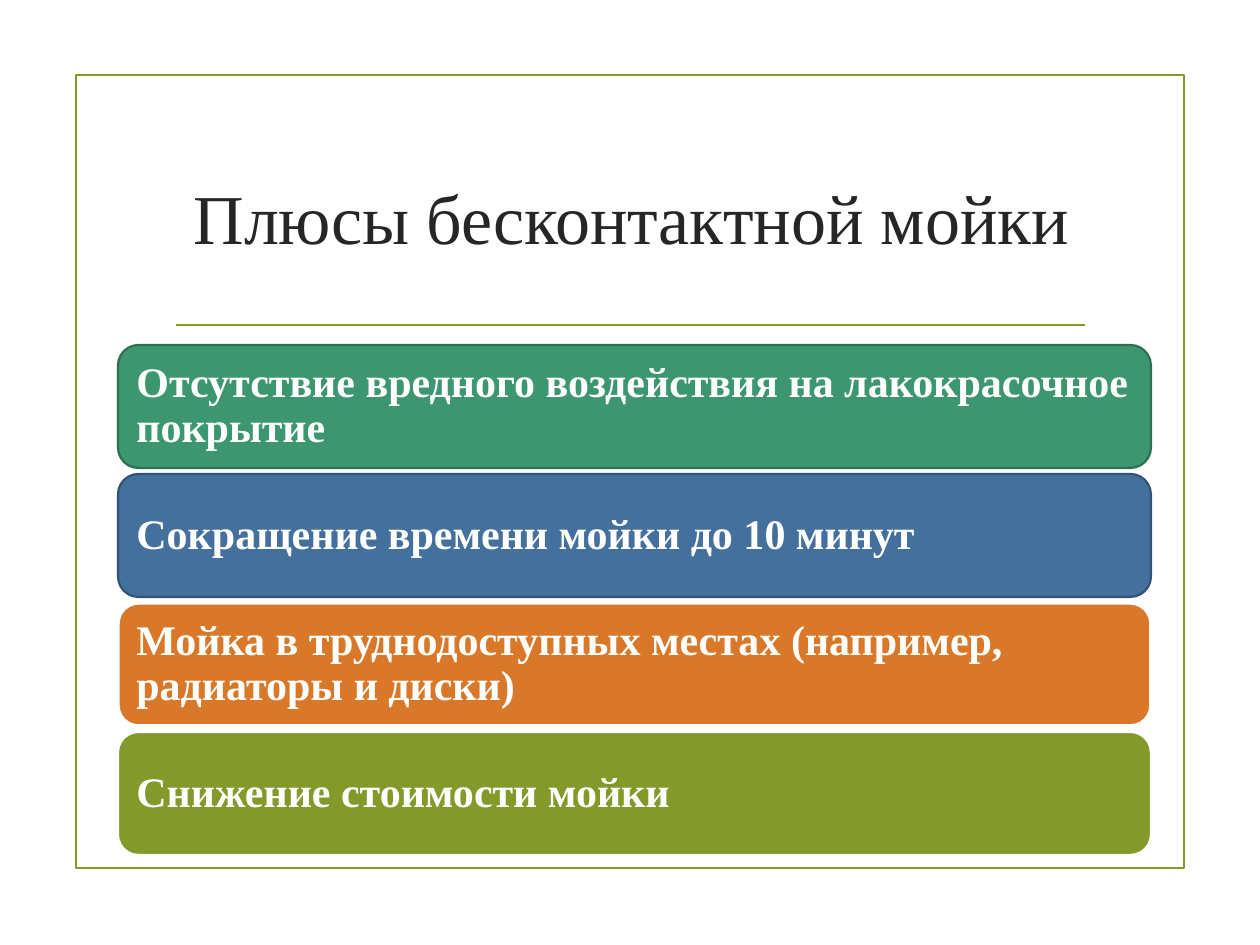
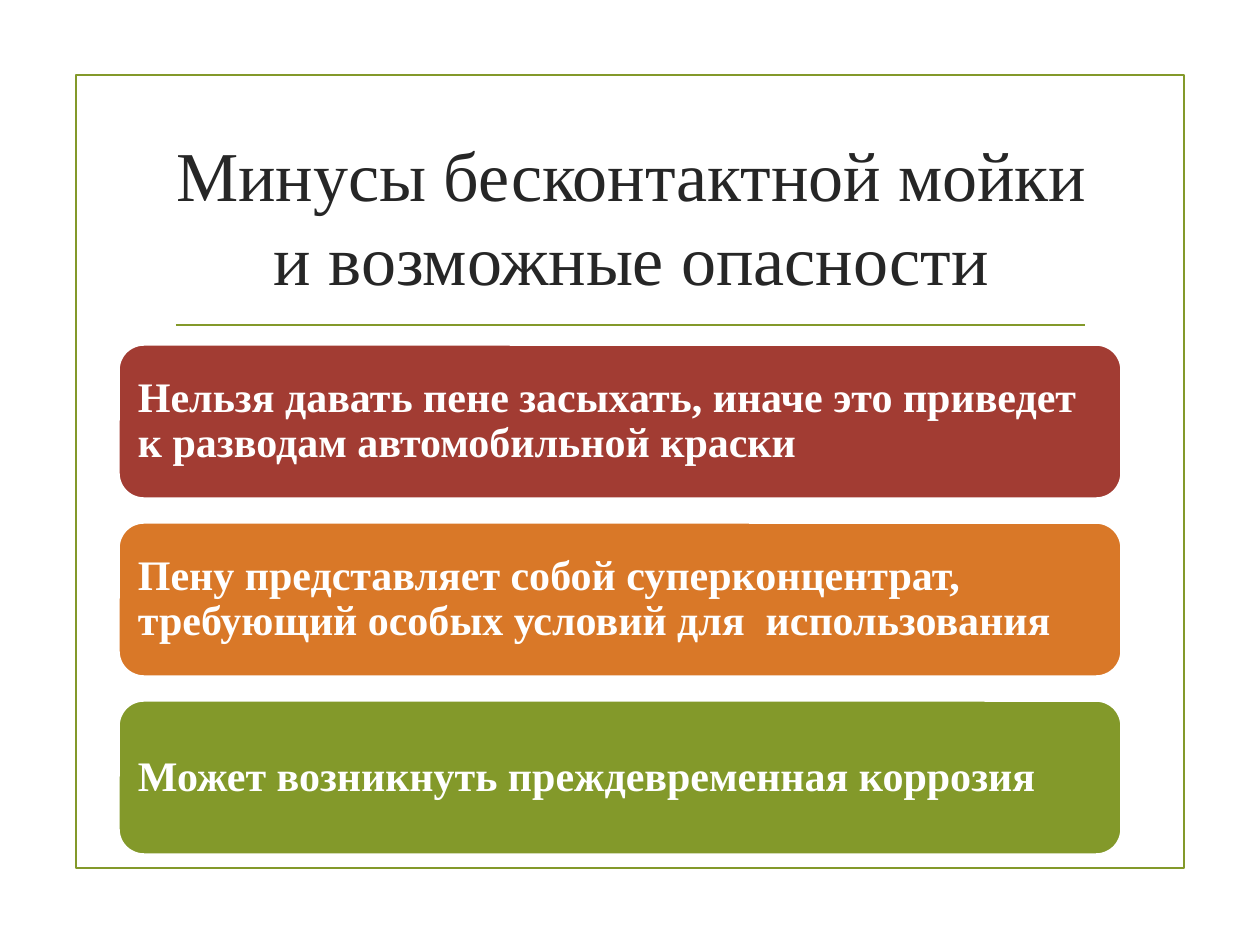
from lxml import etree
from pptx import Presentation, util as u
from pptx.dml.color import RGBColor
from pptx.enum import shapes, text
from pptx.oxml.ns import qn

SCALE = 914400 / 126
GREEN, ORANGE, RED, WHITE = "83992A", "D97828", "A23C33", "FFFFFF"
TITLE_FONT = {"name": "Times New Roman", "size": u.Pt(40), "bold": False}
CARD_FONT = {"name": "Times New Roman", "size": u.Pt(24), "bold": True}
TITLE_PLACE = {"left": 163, "top": 126, "width": 937, "height": 180}
TITLE_FRAME = {"word_wrap": True, "auto_size": text.MSO_AUTO_SIZE.NONE,
               "vertical_anchor": text.MSO_ANCHOR.MIDDLE}
CARD_FRAME = TITLE_FRAME | {f"margin_{side}": u.Inches(0.1)
                            for side in ("left", "top", "right", "bottom")}

SLIDES = [
    {"title": "Плюсы бесконтактной мойки",
     "top": 345, "width": 1033, "height": 123, "pitch": 129,
     "cards": [
         ("Отсутствие вредного воздействия на лакокрасочное покрытие", "3C9770", "2C7053", 1.25),
         ("Сокращение времени мойки до 10 минут", "44709D", "325374", 1.25),
         ("Мойка в труднодоступных местах (например, радиаторы и диски)", ORANGE, WHITE, 2),
         ("Снижение стоимости мойки", GREEN, WHITE, 1.25)]},
    {"title": "Минусы бесконтактной мойки и возможные опасности",
     "top": 344, "width": 1004, "height": 155, "pitch": 178,
     "cards": [
         ("Нельзя давать пене засыхать, иначе это приведет к разводам автомобильной краски", RED, WHITE, 2),
         ("Пену представляет собой суперконцентрат, требующий особых условий для  использования", ORANGE, WHITE, 2),
         ("Может возникнуть преждевременная коррозия", GREEN, WHITE, 2)]},
]


def px(*lengths):
    return [round(length * SCALE) for length in lengths]


def color(target, hex_value):
    target.rgb = RGBColor.from_string(hex_value)


presentation = Presentation()
presentation.slide_width, presentation.slide_height = px(1260, 945)

for content in SLIDES:
    slide = presentation.slides.add_slide(presentation.slide_layouts[5])

    frame = slide.shapes.add_shape(shapes.MSO_SHAPE.RECTANGLE, *px(76, 75, 1108, 793))
    frame.shadow.inherit = False
    frame.fill.background()
    rule = slide.shapes.add_connector(shapes.MSO_CONNECTOR.STRAIGHT, *px(176, 325, 1085, 325))
    etree.SubElement(rule.element.spPr, qn("a:effectLst"))
    for outline in (frame.line, rule.line):
        color(outline.fill.fore_color if outline.fill.type else outline.color, GREEN)
        outline.width = u.Pt(1.25)

    title = slide.shapes.title
    for name, value in TITLE_PLACE.items():
        setattr(title, name, px(value)[0])
    title.text_frame.text = content["title"]
    blocks = [(title.text_frame, TITLE_FRAME, TITLE_FONT, "262626",
               {"alignment": text.PP_ALIGN.CENTER})]

    for row, (label, fill, edge, weight) in enumerate(content["cards"]):
        card = slide.shapes.add_shape(
            shapes.MSO_SHAPE.ROUNDED_RECTANGLE,
            *px(118, content["top"] + row * content["pitch"], content["width"], content["height"]))
        card.shadow.inherit = False
        card.fill.solid()
        color(card.fill.fore_color, fill)
        color(card.line.color, edge)
        card.line.width = u.Pt(weight)
        card.text_frame.text = label
        blocks.append((card.text_frame, CARD_FRAME, CARD_FONT, WHITE,
                       {"alignment": text.PP_ALIGN.LEFT, "line_spacing": 0.9}))

    for text_frame, frame_format, font_format, font_color, paragraph_format in blocks:
        paragraph = text_frame.paragraphs[0]
        font = paragraph.runs[0].font
        for target, values in ((text_frame, frame_format), (paragraph, paragraph_format),
                               (font, font_format)):
            for name, value in values.items():
                setattr(target, name, value)
        color(font.color, font_color)

presentation.save("out.pptx")
